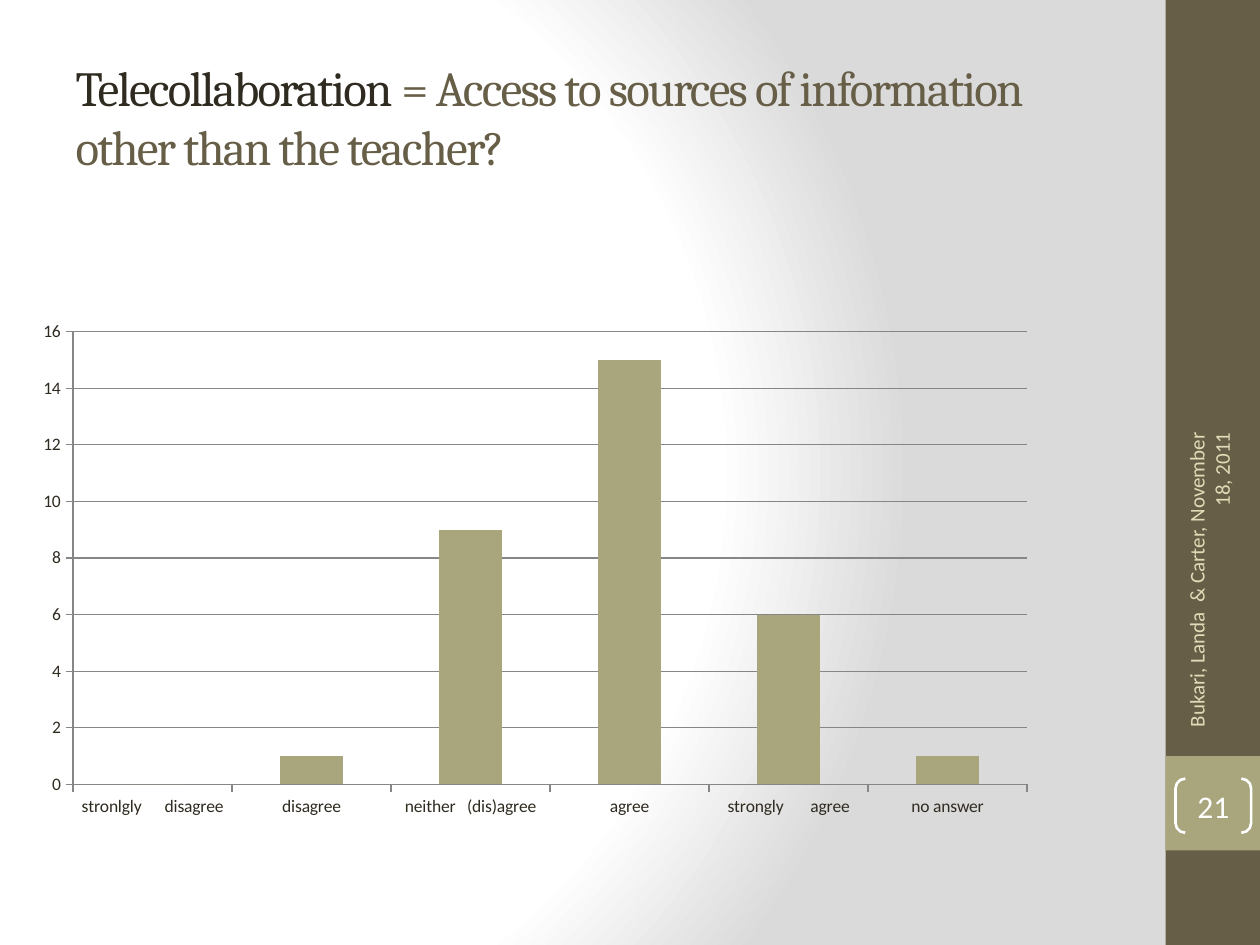
"""Build a slide with a survey column chart and a vertical side band."""
from lxml.etree import SubElement
from pptx import Presentation
from pptx.chart.data import CategoryChartData
from pptx.dml.color import RGBColor
from pptx.enum.chart import XL_CHART_TYPE, XL_TICK_MARK
from pptx.enum.shapes import MSO_SHAPE
from pptx.enum.text import MSO_ANCHOR, MSO_AUTO_SIZE, PP_ALIGN
from pptx.oxml import parse_xml
from pptx.oxml.ns import nsdecls, qn
from pptx.util import Pt

DARK, BROWN, OLIVE, CREAM = "2F2B20", "675E47", "A9A57C", "DFDCB7"
WHITE, GRAY = "FFFFFF", "868686"


def color(value):
    return RGBColor.from_string(value)


def write(paragraph, text, font="Calibri", size=12, fill=WHITE, align=PP_ALIGN.LEFT, spacing=None):
    paragraph.alignment = align
    run = paragraph.add_run()
    run.text = text
    run.font.name = font
    run.font.size = Pt(size)
    run.font.color.rgb = color(fill)
    if spacing is not None:
        run.font._element.set("spc", str(spacing * 100))


presentation = Presentation()
presentation.slide_width, presentation.slide_height = Pt(720), Pt(540)
slide = presentation.slides.add_slide(presentation.slide_layouts[5])

slide.background.fill.solid()
background = slide.element.find(".//" + qn("p:bgPr"))
stops = "".join(
    f'<a:gs pos="{position * 1000}"><a:srgbClr val="{value}"/></a:gs>'
    for position, value in [(0, WHITE), (75, WHITE), (100, "DADADA")]
)
background.replace(background[0], parse_xml(
    f'<a:gradFill {nsdecls("a")} rotWithShape="1"><a:gsLst>{stops}</a:gsLst>'
    '<a:path path="circle"><a:fillToRect l="20000" t="50000" r="100000" b="50000"/></a:path>'
    '</a:gradFill>'
))

for top, height, fill in [(0, 540, BROWN), (432, 54, OLIVE)]:
    band = slide.shapes.add_shape(MSO_SHAPE.RECTANGLE, Pt(666), Pt(top), Pt(54), Pt(height))
    band.shadow.inherit = False
    band.fill.solid()
    band.fill.fore_color.rgb = color(fill)
    band.line.fill.background()

title = slide.shapes.title
title.left, title.top, title.width, title.height = Pt(36), Pt(21.6), Pt(599.76), Pt(90)
title.text_frame.word_wrap = True
title.text_frame.auto_size = MSO_AUTO_SIZE.NONE
title.text_frame.vertical_anchor = MSO_ANCHOR.MIDDLE
for text, fill in [
    ("Telecollaboration ", DARK),
    ("= Access to sources of information other than the teacher?", BROWN),
]:
    write(title.text_frame.paragraphs[0], text, font="Cambria", size=28, fill=fill, spacing=-1)

footer = slide.shapes.add_textbox(Pt(597.6), Pt(318.96), Pt(186.48), Pt(28.8))
footer.rotation = 270
footer.text_frame.word_wrap = True
footer.text_frame.vertical_anchor = MSO_ANCHOR.MIDDLE
write(footer.text_frame.paragraphs[0], "Bukari, Landa  & Carter, November 18, 2011",
      fill=CREAM, align=PP_ALIGN.RIGHT)

number = slide.shapes.add_shape(MSO_SHAPE.DOUBLE_BRACKET, Pt(671.76), Pt(444.96), Pt(43.2), Pt(30.96))
number.adjustments[0] = 0.18
number.shadow.inherit = False
number.fill.background()
number.line.color.rgb = color(WHITE)
number.line.width = Pt(1.5)
frame = number.text_frame
frame.margin_left = frame.margin_top = frame.margin_right = frame.margin_bottom = 0
frame.vertical_anchor = MSO_ANCHOR.MIDDLE
write(frame.paragraphs[0], "21", size=18, align=PP_ALIGN.CENTER)

data = CategoryChartData()
data.categories = ["stronlgly      disagree", "disagree", "neither   (dis)agree",
                   "agree", "strongly       agree", "no answer"]
data.add_series("Series 1", [0, 1, 9, 15, 6, 1])
chart = slide.shapes.add_chart(XL_CHART_TYPE.COLUMN_CLUSTERED, Pt(20.16), Pt(71.28),
                               Pt(599.76), Pt(426.96), data).chart
chart.has_legend = False
chart.has_title = False
chart.font.name = "Calibri"
chart.font.size = Pt(10)
chart.font.color.rgb = color(DARK)
plot = chart.plots[0]
plot.gap_width = 150
plot.vary_by_categories = False
series = plot.series[0]
series.format.fill.solid()
series.format.fill.fore_color.rgb = color(OLIVE)

values = chart.value_axis
values.minimum_scale, values.maximum_scale, values.major_unit = 0, 16, 2
values.has_major_gridlines = True
for axis in (chart.category_axis, values):
    axis.major_tick_mark = XL_TICK_MARK.CROSS if axis is values else XL_TICK_MARK.OUTSIDE
    axis.minor_tick_mark = XL_TICK_MARK.NONE
for line in (chart.category_axis.format.line, values.format.line, values.major_gridlines.format.line):
    line.color.rgb = color(GRAY)
    line.width = Pt(0.75)
values.major_tick_mark = XL_TICK_MARK.OUTSIDE

plot_area = chart._chartSpace.chart.plotArea
for layout in plot_area.findall(qn("c:layout")):
    plot_area.remove(layout)
layout = parse_xml(f'<c:layout {nsdecls("c")}><c:manualLayout/></c:layout>')
plot_area.insert(0, layout)
for tag, value in [("layoutTarget", "inner"), ("xMode", "edge"), ("yMode", "edge"),
                   ("x", 0.036), ("y", 0.277), ("w", 0.909), ("h", 0.606)]:
    SubElement(layout[0], qn(f"c:{tag}")).set("val", str(value))

presentation.save("out.pptx")
